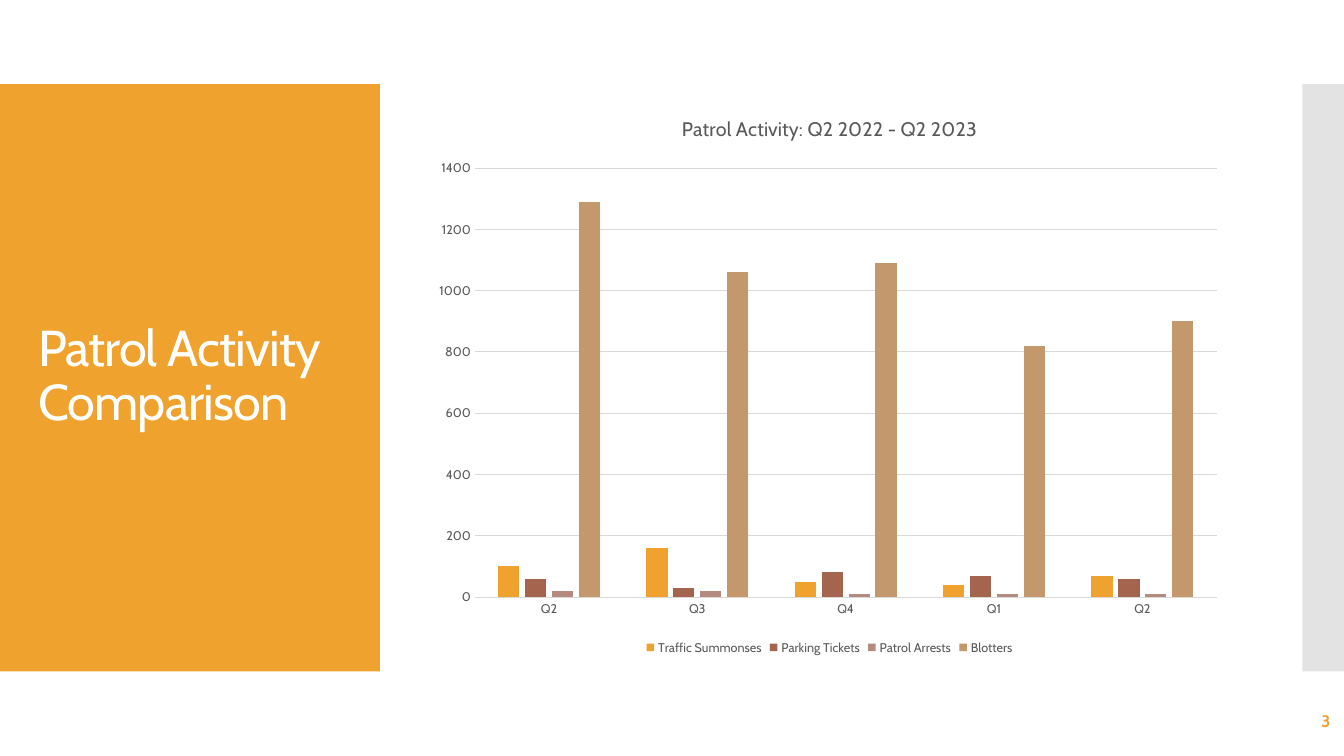
from dataclasses import dataclass

from pptx import Presentation
from pptx.chart.data import CategoryChartData
from pptx.dml.color import RGBColor
from pptx.enum.chart import XL_CHART_TYPE as ChartType
from pptx.enum.chart import XL_LEGEND_POSITION as LegendPos
from pptx.enum.chart import XL_TICK_MARK as Tick
from pptx.enum.shapes import MSO_SHAPE as Shape
from pptx.enum.text import MSO_ANCHOR as Anchor
from pptx.enum.text import MSO_AUTO_SIZE as AutoSize
from pptx.enum.text import PP_ALIGN as Align
from pptx.oxml import parse_xml
from pptx.oxml.ns import nsdecls, qn
from pptx.util import Pt

FONT = "Cabin"
COLORS = {
    "white": "FFFFFF",
    "orange": "F0A22E",
    "rust": "A5644E",
    "mauve": "B58B80",
    "tan": "C3986D",
    "edge": "C8C8C8",
    "text": "595959",
    "grid": "D9D9D9",
}


@dataclass
class Panel:
    left: float
    width: float
    color: str
    alpha: int = 100


@dataclass
class Measure:
    name: str
    values: tuple[int, ...]
    color: str


PANELS = [Panel(0, 271.4, "orange"), Panel(930.2, 29.8, "edge", 50)]
QUARTERS = ["Q2", "Q3", "Q4", "Q1", "Q2"]
MEASURES = [
    Measure("Traffic Summonses", (100, 160, 50, 40, 70), "orange"),
    Measure("Parking Tickets", (60, 30, 80, 70, 60), "rust"),
    Measure("Patrol Arrests", (20, 20, 10, 10, 10), "mauve"),
    Measure("Blotters", (1290, 1060, 1090, 820, 900), "tan"),
]
PLOT_AREA = {"x": 0.06, "y": 0.13, "w": 0.92, "h": 0.76}


def rgb(name: str) -> RGBColor:
    return RGBColor.from_string(COLORS[name])


def style_font(font, size: float, color: str, bold: bool = False) -> None:
    font.name = FONT
    font.size = Pt(size)
    font.bold = bold
    font.color.rgb = rgb(color)


def add_panel(s, panel: Panel) -> None:
    sp = s.shapes.add_shape(Shape.RECTANGLE, Pt(panel.left), Pt(60), Pt(panel.width), Pt(419.5))
    sp.shadow.inherit = False
    sp.fill.solid()
    sp.fill.fore_color.rgb = rgb(panel.color)
    sp.line.fill.background()
    if panel.alpha < 100:
        color = sp.fill._xPr.find(".//" + qn("a:srgbClr"))
        color.append(parse_xml(f'<a:alpha {nsdecls("a")} val="{panel.alpha * 1000}"/>'))
    s.shapes._spTree.insert(2, sp._element)


def set_title(s) -> None:
    sp = s.shapes.title
    sp.left, sp.top, sp.width, sp.height = Pt(20), Pt(88.5), Pt(232), Pt(362)
    tf = sp.text_frame
    tf.text = "Patrol Activity Comparison"
    tf.word_wrap = True
    tf.auto_size = AutoSize.NONE
    tf.vertical_anchor = Anchor.MIDDLE
    p = tf.paragraphs[0]
    p.alignment = Align.LEFT
    p.line_spacing = 0.9
    style_font(p.font, 36, "white")
    p.runs[0].font._element.set("spc", "-60")


def add_page_number(s) -> None:
    sp = s.shapes.add_textbox(Pt(837.4), Pt(500.4), Pt(120), Pt(28.8))
    tf = sp.text_frame
    tf.text = "3"
    tf.word_wrap = True
    tf.vertical_anchor = Anchor.MIDDLE
    p = tf.paragraphs[0]
    p.alignment = Align.RIGHT
    style_font(p.font, 12, "orange", bold=True)


def place_plot(chart) -> None:
    area = chart._chartSpace.chart.plotArea
    for old in area.findall(qn("c:layout")):
        area.remove(old)
    sizes = "".join(f'<c:{key} val="{value}"/>' for key, value in PLOT_AREA.items())
    area.insert(0, parse_xml(
        f'<c:layout {nsdecls("c")}><c:manualLayout><c:layoutTarget val="inner"/>'
        f'<c:xMode val="edge"/><c:yMode val="edge"/>{sizes}</c:manualLayout></c:layout>'
    ))


def style_axes(chart) -> None:
    cat, val = chart.category_axis, chart.value_axis
    for axis in (cat, val):
        axis.major_tick_mark = axis.minor_tick_mark = Tick.NONE
        style_font(axis.tick_labels.font, 9, "text")
    val.minimum_scale, val.maximum_scale, val.major_unit = 0, 1400, 200
    val.has_major_gridlines = True
    val.format.line.fill.background()
    for line in (cat.format.line, val.major_gridlines.format.line):
        line.color.rgb = rgb("grid")
        line.width = Pt(0.75)


def add_patrol_chart(s) -> None:
    data = CategoryChartData()
    data.categories = QUARTERS
    for measure in MEASURES:
        data.add_series(measure.name, measure.values)
    chart = s.shapes.add_chart(
        ChartType.COLUMN_CLUSTERED, Pt(304.6), Pt(67.7), Pt(576), Pt(403.2), data
    ).chart
    chart.font.name = FONT
    chart.font.size = Pt(10)
    chart.has_title = True
    tf = chart.chart_title.text_frame
    tf.text = "Patrol Activity: Q2 2022 - Q2 2023"
    style_font(tf.paragraphs[0].font, 14, "text")
    chart.has_legend = True
    chart.legend.position = LegendPos.BOTTOM
    chart.legend.include_in_layout = False
    style_font(chart.legend.font, 9, "text")
    plot = chart.plots[0]
    plot.gap_width, plot.overlap = 219, -27
    plot.vary_by_categories = False
    for series, measure in zip(plot.series, MEASURES):
        series.format.fill.solid()
        series.format.fill.fore_color.rgb = rgb(measure.color)
    style_axes(chart)
    place_plot(chart)


def main() -> None:
    prs = Presentation()
    prs.slide_width, prs.slide_height = Pt(960), Pt(540)
    s = prs.slides.add_slide(prs.slide_layouts[5])
    for panel in PANELS:
        add_panel(s, panel)
    set_title(s)
    add_page_number(s)
    add_patrol_chart(s)
    prs.save("out.pptx")


if __name__ == "__main__":
    main()
